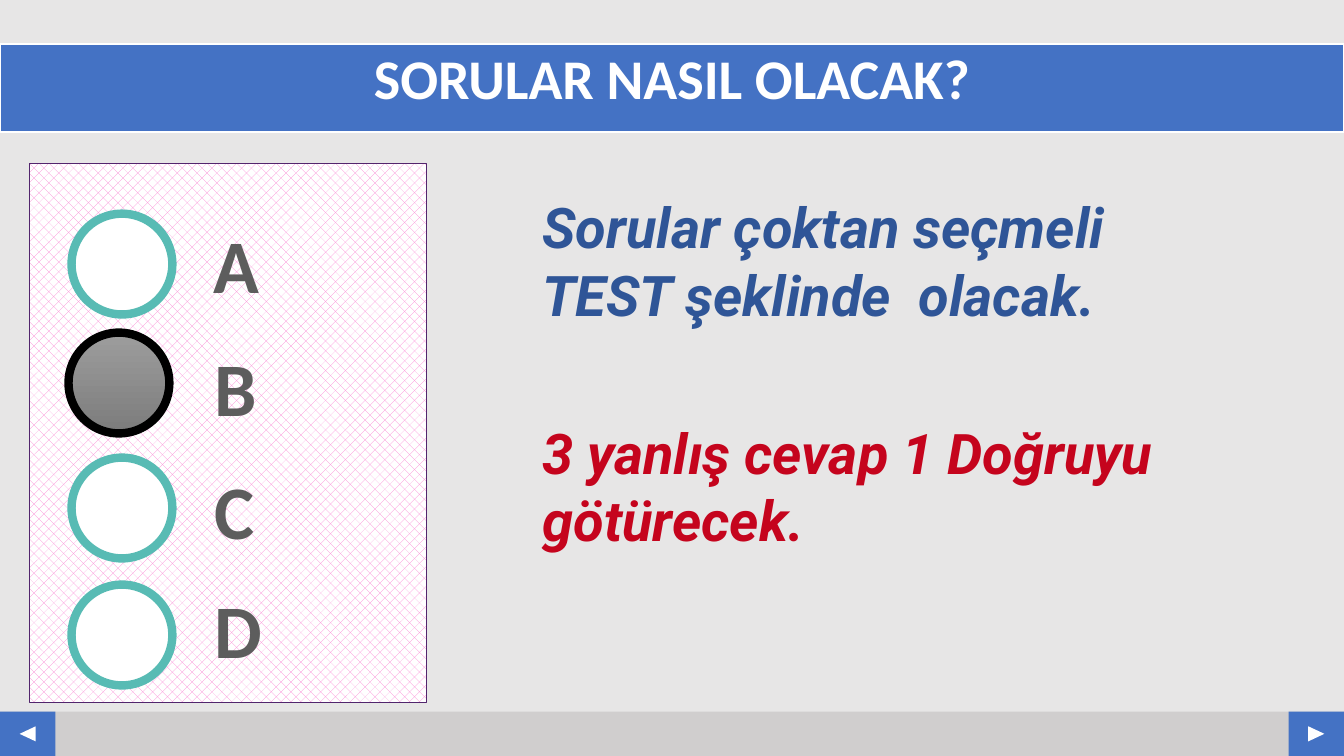
"""Build the slide that explains the multiple-choice test format."""
from dataclasses import dataclass

from pptx import Presentation
from pptx.dml.color import RGBColor
from pptx.enum.dml import MSO_PATTERN as Pattern
from pptx.enum.shapes import MSO_SHAPE as Preset
from pptx.enum.text import MSO_ANCHOR as Anchor, PP_ALIGN as Align
from pptx.shapes.autoshape import Shape
from pptx.slide import Slide
from pptx.util import Inches, Pt

BLUE, WHITE, BLACK = "4472C4", "FFFFFF", "000000"
TEAL, DARK_GRAY = "58BBB4", "5D5D5D"
SLIDE_WIDTH, SLIDE_HEIGHT = 13.33, 7.5
FOOTER_TOP, FOOTER_HEIGHT, BUTTON_WIDTH = 7.06, 0.44, 0.55


@dataclass(frozen=True)
class Box:
    left: float
    top: float
    width: float
    height: float

    def lengths(self) -> list[Inches]:
        return [Inches(n) for n in (self.left, self.top, self.width, self.height)]


@dataclass(frozen=True)
class Choice:
    letter: str
    bubble_left: float
    bubble_top: float
    letter_box: Box
    marked: bool = False


@dataclass(frozen=True)
class Statement:
    text: str
    top: float
    color: str


CHOICES = [
    Choice("A", 0.71, 2.12, Box(2.02, 2.11, 0.66, 1.01)),
    Choice("B", 0.68, 3.3, Box(2.02, 3.33, 0.63, 1.01), marked=True),
    Choice("C", 0.71, 4.54, Box(2.03, 4.55, 0.6, 1.01)),
    Choice("D", 0.71, 5.8, Box(2.02, 5.73, 0.68, 1.01)),
]
STATEMENTS = [
    Statement("Sorular çoktan seçmeli TEST şeklinde  olacak.", 1.84, "2F5597"),
    Statement("3 yanlış cevap 1 Doğruyu götürecek.", 4.08, "C5041D"),
]


def rgb(value: str) -> RGBColor:
    return RGBColor.from_string(value)


def add_block(slide: Slide, preset: Preset, box: Box, fill: str = WHITE,
              line: str | None = None, line_width: float = 1,
              rotation: float = 0) -> Shape:
    block = slide.shapes.add_shape(preset, *box.lengths())
    block.shadow.inherit = False
    block.rotation = rotation
    block.fill.solid()
    block.fill.fore_color.rgb = rgb(fill)
    if line:
        block.line.color.rgb = rgb(line)
        block.line.width = Pt(line_width)
    else:
        block.line.fill.background()
    return block


def write(holder: Shape, text: str, *, size: float, color: str,
          font: str = "Calibri", italic: bool = False, align: Align = Align.CENTER,
          anchor: Anchor = Anchor.TOP, wrap: bool = True, spacing: float = 1,
          margin_x: float = 0.1, margin_y: float = 0.05) -> None:
    frame = holder.text_frame
    frame.word_wrap = wrap
    frame.vertical_anchor = anchor
    frame.margin_left = frame.margin_right = Inches(margin_x)
    frame.margin_top = frame.margin_bottom = Inches(margin_y)
    paragraph = frame.paragraphs[0]
    paragraph.alignment = align
    paragraph.line_spacing = spacing
    run = paragraph.add_run()
    run.text = text
    run.font.name, run.font.size = font, Pt(size)
    run.font.bold, run.font.italic = True, italic
    run.font.color.rgb = rgb(color)


def add_footer(slide: Slide) -> None:
    add_block(slide, Preset.RECTANGLE,
              Box(0, FOOTER_TOP, SLIDE_WIDTH, FOOTER_HEIGHT), "D0CECE")
    for left, rotation in ((0, 270), (SLIDE_WIDTH - BUTTON_WIDTH, 90)):
        add_block(slide, Preset.RECTANGLE,
                  Box(left, FOOTER_TOP, BUTTON_WIDTH, FOOTER_HEIGHT), BLUE)
        add_block(slide, Preset.ISOSCELES_TRIANGLE,
                  Box(left + 0.2, 7.2, 0.15, 0.16), rotation=rotation)


def add_answer_sheet(slide: Slide) -> None:
    sheet = add_block(slide, Preset.RECTANGLE, Box(0.29, 1.62, 3.94, 5.35),
                      line="52256D")
    sheet.fill.patterned()
    sheet.fill.pattern = Pattern.PERCENT_30
    sheet.fill.fore_color.rgb = rgb("FB85D4")
    sheet.fill.back_color.rgb = rgb(WHITE)


def add_choice(slide: Slide, choice: Choice) -> None:
    bubble = add_block(slide, Preset.OVAL,
                       Box(choice.bubble_left, choice.bubble_top, 1, 1),
                       line=BLACK if choice.marked else TEAL, line_width=6)
    if choice.marked:
        bubble.fill.gradient()
        bubble.fill.gradient_angle = 270
        for stop, shade in zip(bubble.fill.gradient_stops, ("9D9D9D", "7C7C7C")):
            stop.color.rgb = rgb(shade)
    label = slide.shapes.add_textbox(*choice.letter_box.lengths())
    write(label, choice.letter, size=54, color=DARK_GRAY, wrap=False)


def add_statement(slide: Slide, statement: Statement) -> None:
    body = slide.shapes.add_textbox(*Box(5.25, statement.top, 7.09, 1.48).lengths())
    write(body, statement.text, size=40, color=statement.color, font="Roboto",
          italic=True, align=Align.LEFT, anchor=Anchor.MIDDLE,
          margin_x=0.13, margin_y=0.07)


def main() -> None:
    deck = Presentation()
    deck.slide_width, deck.slide_height = Inches(SLIDE_WIDTH), Inches(SLIDE_HEIGHT)
    slide = deck.slides.add_slide(deck.slide_layouts[6])
    slide.background.fill.solid()
    slide.background.fill.fore_color.rgb = rgb("E7E6E6")

    add_footer(slide)
    add_answer_sheet(slide)
    title = add_block(slide, Preset.RECTANGLE, Box(0, 0.44, SLIDE_WIDTH, 0.87),
                      BLUE, line=WHITE, line_width=1.5)
    write(title, "SORULAR NASIL OLACAK?", size=40, color=WHITE, spacing=0.9,
          margin_y=0.07)
    for choice in CHOICES:
        add_choice(slide, choice)
    for statement in STATEMENTS:
        add_statement(slide, statement)
    deck.save("out.pptx")


if __name__ == "__main__":
    main()
